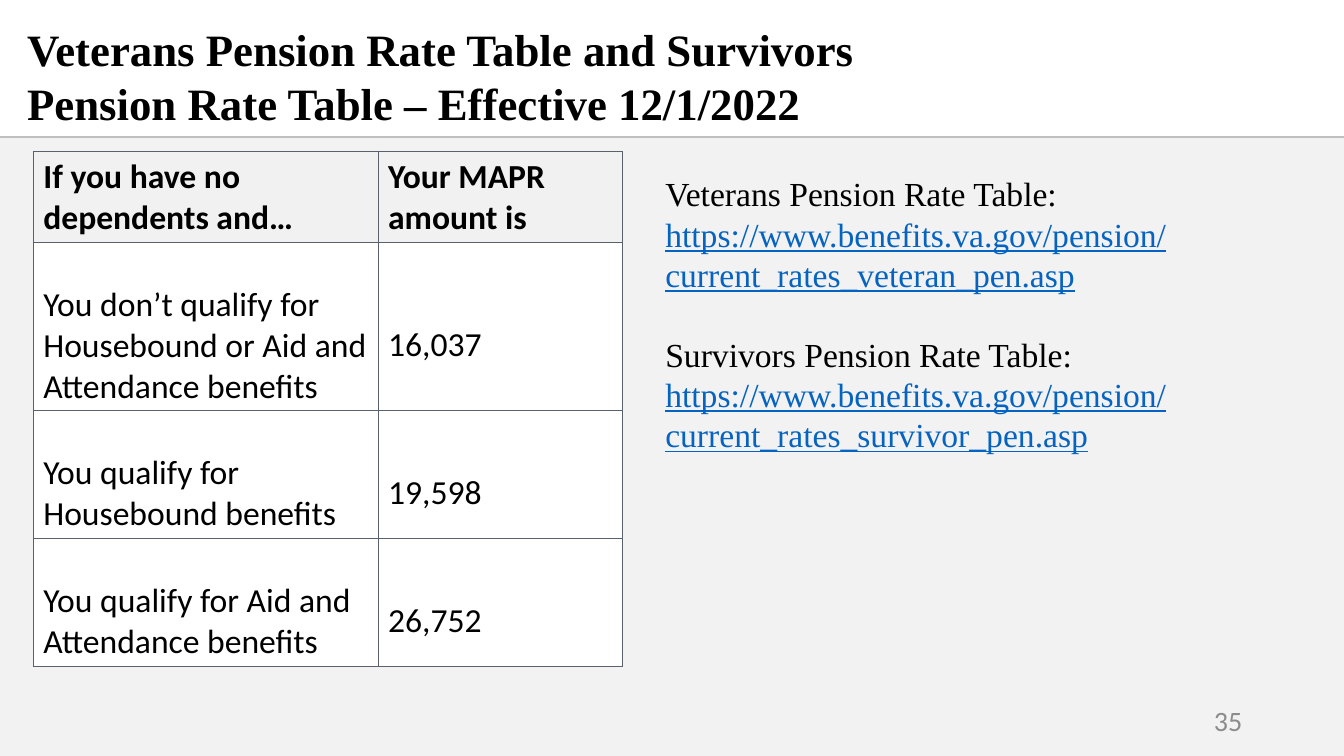
from lxml import etree
from pptx import Presentation
from pptx.dml.color import RGBColor
from pptx.enum.shapes import MSO_CONNECTOR, MSO_SHAPE
from pptx.enum.text import MSO_ANCHOR, PP_ALIGN
from pptx.oxml.ns import qn
from pptx.util import Inches, Pt

COLORS = {
    "panel": "F2F2F2",
    "rule": "BFBFBF",
    "text": "000000",
    "link": "0563C1",
    "number": "8C8C8C",
    "header": "F1F1F1",
    "cell": "FFFFFF",
    "border": "5B616B",
}
SERIF, SANS = "Times New Roman", "Calibri"

RATES = [
    ("If you have no dependents and…", "Your MAPR amount is"),
    ("You don’t qualify for Housebound or Aid and Attendance benefits", "16,037"),
    ("You qualify for Housebound benefits", "19,598"),
    ("You qualify for Aid and Attendance benefits", "26,752"),
]
COLUMN_WIDTHS = [3.42, 2.42]
ROW_HEIGHTS = [0.9, 1.67, 1.27, 1.27]

SOURCES = [
    ("Veterans Pension Rate Table:",
     "https://www.benefits.va.gov/pension/current_rates_veteran_pen.asp"),
    ("Survivors Pension Rate Table:",
     "https://www.benefits.va.gov/pension/current_rates_survivor_pen.asp"),
]


def rgb(name):
    return RGBColor.from_string(COLORS[name])


def style(paragraph, size, face, color="text", bold=False, underline=False):
    for run in paragraph.runs:
        font = run.font
        font.size, font.name = Pt(size), face
        font.bold, font.underline = bold, underline
        font.color.rgb = rgb(color)


def add_text_frame(slide, left, top, width, height):
    box = slide.shapes.add_textbox(Inches(left), Inches(top), Inches(width), Inches(height))
    box.text_frame.word_wrap = True
    return box.text_frame


def add_backdrop(slide):
    """Grey body panel with the rule that parts it from the title."""
    panel = slide.shapes.add_shape(
        MSO_SHAPE.RECTANGLE, 0, Inches(1.37), Inches(13.33), Inches(6.13))
    panel.shadow.inherit = False
    panel.fill.solid()
    panel.fill.fore_color.rgb = rgb("panel")
    panel.line.fill.background()

    rule = slide.shapes.add_connector(
        MSO_CONNECTOR.STRAIGHT, 0, Inches(1.36), Inches(13.33), Inches(1.36))
    rule.line.color.rgb = rgb("rule")
    rule.line.width = Pt(1.5)
    etree.SubElement(rule._element.spPr, qn("a:effectLst"))


def add_title(slide):
    title = add_text_frame(slide, 0.17, 0.17, 8.83, 1.18)
    title.text = ("Veterans Pension Rate Table and Survivors "
                  "Pension Rate Table – Effective 12/1/2022")
    style(title.paragraphs[0], 32, SERIF, bold=True)


def add_page_number(slide):
    number = add_text_frame(slide, 9.42, 6.95, 3, 0.4)
    number.vertical_anchor = MSO_ANCHOR.MIDDLE
    number.text = "35"
    number.paragraphs[0].alignment = PP_ALIGN.RIGHT
    style(number.paragraphs[0], 20, SANS, "number")


def add_sources(slide):
    frame = add_text_frame(slide, 6.5, 1.67, 6.08, 3.23)
    for index, (label, address) in enumerate(SOURCES):
        heading = frame.add_paragraph() if index else frame.paragraphs[0]
        heading.text = label
        if index:
            heading.space_before = Pt(28)
        style(heading, 24, SERIF)
        link = frame.add_paragraph()
        link.text = address
        style(link, 24, SERIF, "link", underline=True)


def add_borders(cell):
    properties = cell._tc.get_or_add_tcPr()
    for position, side in enumerate(("lnL", "lnR", "lnT", "lnB")):
        border = etree.Element(qn(f"a:{side}"), w=str(Pt(0.75)))
        fill = etree.SubElement(border, qn("a:solidFill"))
        etree.SubElement(fill, qn("a:srgbClr"), val=COLORS["border"])
        properties.insert(position, border)


def add_rate_table(slide):
    table = slide.shapes.add_table(
        len(RATES), len(COLUMN_WIDTHS), Inches(0.33), Inches(1.5),
        Inches(sum(COLUMN_WIDTHS)), Inches(sum(ROW_HEIGHTS))).table
    for column, width in zip(table.columns, COLUMN_WIDTHS):
        column.width = Inches(width)
    for row, height, texts in zip(table.rows, ROW_HEIGHTS, RATES):
        row.height = Inches(height)
        is_header = texts == RATES[0]
        for cell, text in zip(row.cells, texts):
            cell.text = text
            cell.vertical_anchor = MSO_ANCHOR.MIDDLE
            if not is_header:
                cell.margin_top = Inches(0.42)
            cell.fill.solid()
            cell.fill.fore_color.rgb = rgb("header" if is_header else "cell")
            style(cell.text_frame.paragraphs[0], 24, SANS, bold=is_header)
            add_borders(cell)


def main():
    presentation = Presentation()
    presentation.slide_width = Inches(13.33)
    presentation.slide_height = Inches(7.5)
    slide = presentation.slides.add_slide(presentation.slide_layouts[6])
    add_backdrop(slide)
    add_page_number(slide)
    add_title(slide)
    add_sources(slide)
    add_rate_table(slide)
    presentation.save("out.pptx")


if __name__ == "__main__":
    main()
